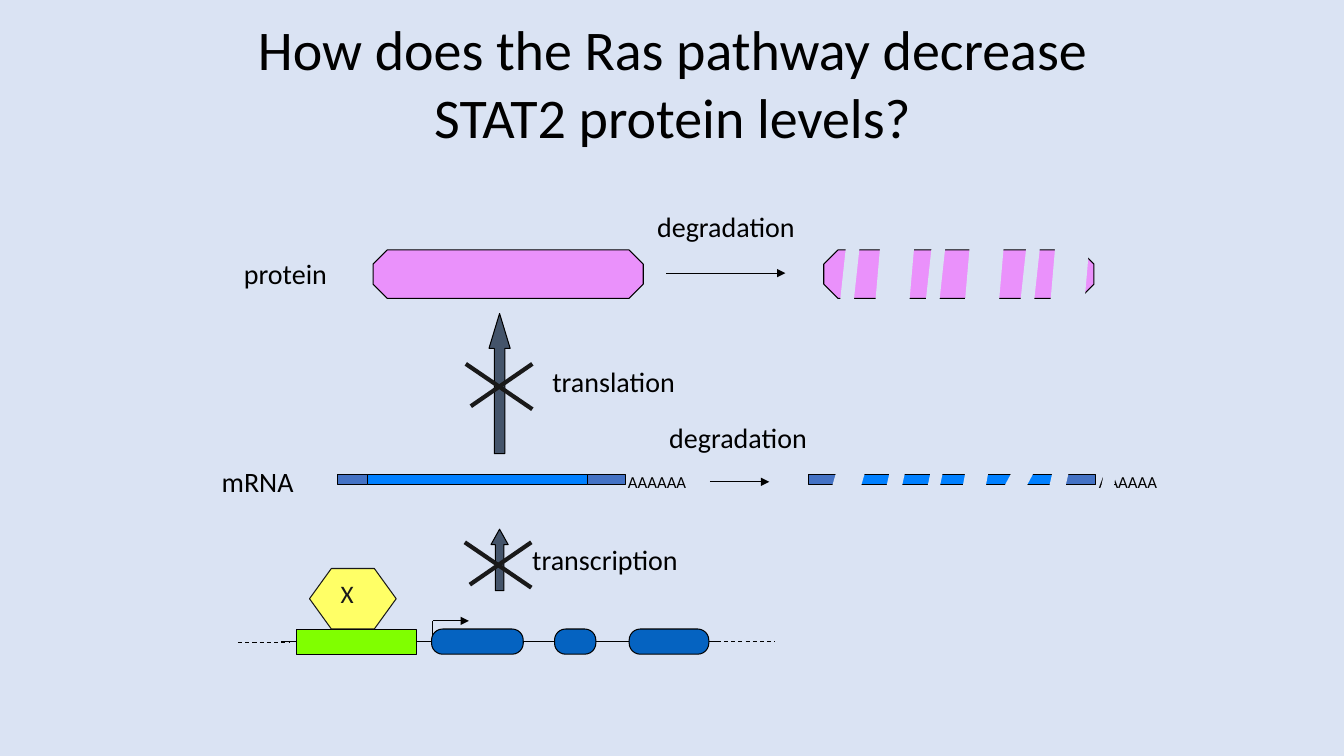
from pptx import Presentation
from pptx.dml.color import RGBColor
from pptx.enum.dml import MSO_LINE
from pptx.enum.shapes import MSO_CONNECTOR, MSO_SHAPE
from pptx.enum.text import MSO_AUTO_SIZE, PP_ALIGN
from pptx.oxml.ns import qn
from pptx.util import Inches, Pt
from lxml import etree

RECT, ROUND = MSO_SHAPE.RECTANGLE, MSO_SHAPE.ROUNDED_RECTANGLE
OCTAGON, HEXAGON = MSO_SHAPE.OCTAGON, MSO_SHAPE.HEXAGON
UP_ARROW, SLANT = MSO_SHAPE.UP_ARROW, MSO_SHAPE.PARALLELOGRAM
STRAIGHT, DASH = MSO_CONNECTOR.STRAIGHT, MSO_LINE.DASH
LEFT, CENTER = PP_ALIGN.LEFT, PP_ALIGN.CENTER

BACKGROUND = RGBColor(0xDA, 0xE3, 0xF3)
BLACK = RGBColor(0x00, 0x00, 0x00)
INK = RGBColor(0x19, 0x19, 0x19)
SLATE = RGBColor(0x44, 0x54, 0x6A)
PINK = RGBColor(0xEA, 0x91, 0xFB)
GREEN = RGBColor(0x80, 0xFF, 0x00)
YELLOW = RGBColor(0xFF, 0xFF, 0x66)
EXON_BLUE = RGBColor(0x05, 0x63, 0xC1)
UTR_BLUE = RGBColor(0x44, 0x72, 0xC4)
CODING_BLUE = RGBColor(0x00, 0x80, 0xFF)

FONT = "Calibri"
COLS, ROWS = 13.33, 7.5  # grid of one-inch cells
THIN, HEAVY = 0.75, 3
DNA_Y, STRAND_Y, PROTEIN_Y = 6.36, 4.71, 2.48
INTACT_X, DEGRADED_X = 3.35, 8.02


def grid(*cells):
    return [Inches(c) for c in cells]


def add_shape(s, kind, box, fill, line=BLACK, adj=(), rotation=0):
    sp = s.shapes.add_shape(kind, *grid(*box))
    sp.shadow.inherit = False
    sp.rotation = rotation
    for i, value in enumerate(adj):
        sp.adjustments[i] = value
    sp.fill.solid()
    sp.fill.fore_color.rgb = fill
    if line is None:
        sp.line.fill.background()
    else:
        sp.line.color.rgb = line
        sp.line.width = Pt(THIN)


def add_line(s, start, end, color=BLACK, width=THIN, dash=None, arrow=False):
    cx = s.shapes.add_connector(STRAIGHT, *grid(*start, *end))
    cx.line.color.rgb = color
    cx.line.width = Pt(width)
    if dash is not None:
        cx.line.dash_style = dash
    if arrow:
        etree.SubElement(cx.line._get_or_add_ln(), qn("a:tailEnd"), type="triangle")
    etree.SubElement(cx._element.spPr, qn("a:effectLst"))


def add_text(s, text, box, size=20, color=BLACK, align=LEFT, wrap=False):
    tf = s.shapes.add_textbox(*grid(*box)).text_frame
    tf.word_wrap = wrap
    tf.auto_size = MSO_AUTO_SIZE.SHAPE_TO_FIT_TEXT
    p = tf.paragraphs[0]
    p.text = text
    p.alignment = align
    p.font.name, p.font.size, p.font.color.rgb = FONT, Pt(size), color


def add_protein(s, x):
    add_shape(s, OCTAGON, (x, PROTEIN_Y, 2.68, 0.48), PINK, adj=(0.293,))


def add_mrna(s, x):
    add_shape(s, RECT, (x, STRAND_Y, 2.85, 0.1), UTR_BLUE)
    add_shape(s, RECT, (x + 0.29, STRAND_Y, 2.19, 0.1), CODING_BLUE)
    add_text(s, "AAAAAA", (x + 2.78, STRAND_Y - 0.08, 0.79, 0.3), size=12)


def add_cuts(s, height, cuts):
    """Slanted gaps that break a molecule into fragments."""
    for x, y, width, rotation in cuts:
        add_shape(s, SLANT, (x, y, width, height), BACKGROUND, line=None,
                  adj=(0.25,), rotation=rotation)


def add_cross(s, x, y):
    right = x + 0.66
    add_line(s, (x, y), (right, y + 0.45), INK, HEAVY)
    add_line(s, (x + 0.05, y + 0.42), (right, y), INK, HEAVY)


def add_gene(s):
    # DNA strand with dashed ends and the transcription start arrow
    add_line(s, (2.79, DNA_Y), (7.15, DNA_Y))
    add_line(s, (7.18, DNA_Y), (7.69, DNA_Y), dash=DASH)
    add_line(s, (2.36, DNA_Y + 0.01), (2.88, DNA_Y + 0.01), dash=DASH)
    add_line(s, (4.29, DNA_Y), (4.29, DNA_Y - 0.2))
    add_line(s, (4.29, DNA_Y - 0.2), (4.65, DNA_Y - 0.2), arrow=True)
    # Promoter, exons and the bound factor
    add_shape(s, RECT, (2.94, 6.25, 1.19, 0.24), GREEN)
    for x, width in ((4.28, 0.91), (5.5, 0.41), (6.24, 0.79)):
        add_shape(s, ROUND, (x, 6.24, width, 0.25), EXON_BLUE, adj=(0.441,))
    add_shape(s, HEXAGON, (3.07, 5.64, 0.86, 0.6), YELLOW, INK, adj=(0.361, 1.155))
    add_text(s, "X", (3.28, 5.69, 0.33, 0.4), size=18, color=INK)


def main():
    prs = Presentation()
    prs.slide_width, prs.slide_height = grid(COLS, ROWS)
    s = prs.slides.add_slide(prs.slide_layouts[6])
    s.background.fill.solid()
    s.background.fill.fore_color.rgb = BACKGROUND

    add_text(s, "How does the Ras pathway decrease STAT2 protein levels?",
             (2.16, 0.1, 9.02, 1.43), size=40, align=CENTER, wrap=True)

    # Protein and its degradation
    add_protein(s, 3.7)
    add_protein(s, 8.17)
    add_cuts(s, 1.3, [
        (8.66, 1.95, 0.45, 0), (9.55, 1.93, 0.45, 0), (10.38, 2.14, 0.45, 0),
        (9.19, 2.06, 0.18, 4.2), (10.13, 2.05, 0.18, 4.2), (8.34, 2.06, 0.18, 4.2),
    ])
    add_line(s, (6.61, 2.71), (7.79, 2.71), arrow=True)

    # mRNA and its degradation
    add_mrna(s, INTACT_X)
    add_mrna(s, DEGRADED_X)
    add_cuts(s, 0.69, [
        (9.2, 4.39, 0.16, 8.5), (9.93, 4.5, 0.26, 22.7), (10.92, 4.4, 0.16, 8.5),
        (9.52, 4.44, 0.3, 4.3), (10.41, 4.36, 0.21, 8.5), (8.78, 4.43, 0.2, 8.5),
        (8.22, 4.45, 0.37, 8.5),
    ])
    add_line(s, (7.04, 4.78), (7.63, 4.78), arrow=True)

    # Gene
    add_gene(s)

    # Blocked steps
    add_shape(s, UP_ARROW, (4.87, 5.25, 0.17, 0.61), SLATE, adj=(0.5, 0.898))
    add_shape(s, UP_ARROW, (4.85, 3.11, 0.21, 1.39), SLATE, adj=(0.5, 1.649))
    add_cross(s, 4.61, 5.38)
    add_cross(s, 4.62, 3.61)

    # Labels
    for text, box, align in (
        ("degradation", (6.41, 2.03, 1.58, 0.44), CENTER),
        ("degradation", (6.53, 4.12, 1.58, 0.44), CENTER),
        ("protein", (2.32, 2.5, 1.05, 0.43), LEFT),
        ("mRNA", (2.1, 4.56, 0.92, 0.44), LEFT),
        ("translation", (5.38, 3.57, 1.48, 0.43), LEFT),
        ("transcription", (5.18, 5.33, 1.71, 0.43), LEFT),
    ):
        add_text(s, text, box, align=align)

    prs.save("out.pptx")


if __name__ == "__main__":
    main()
